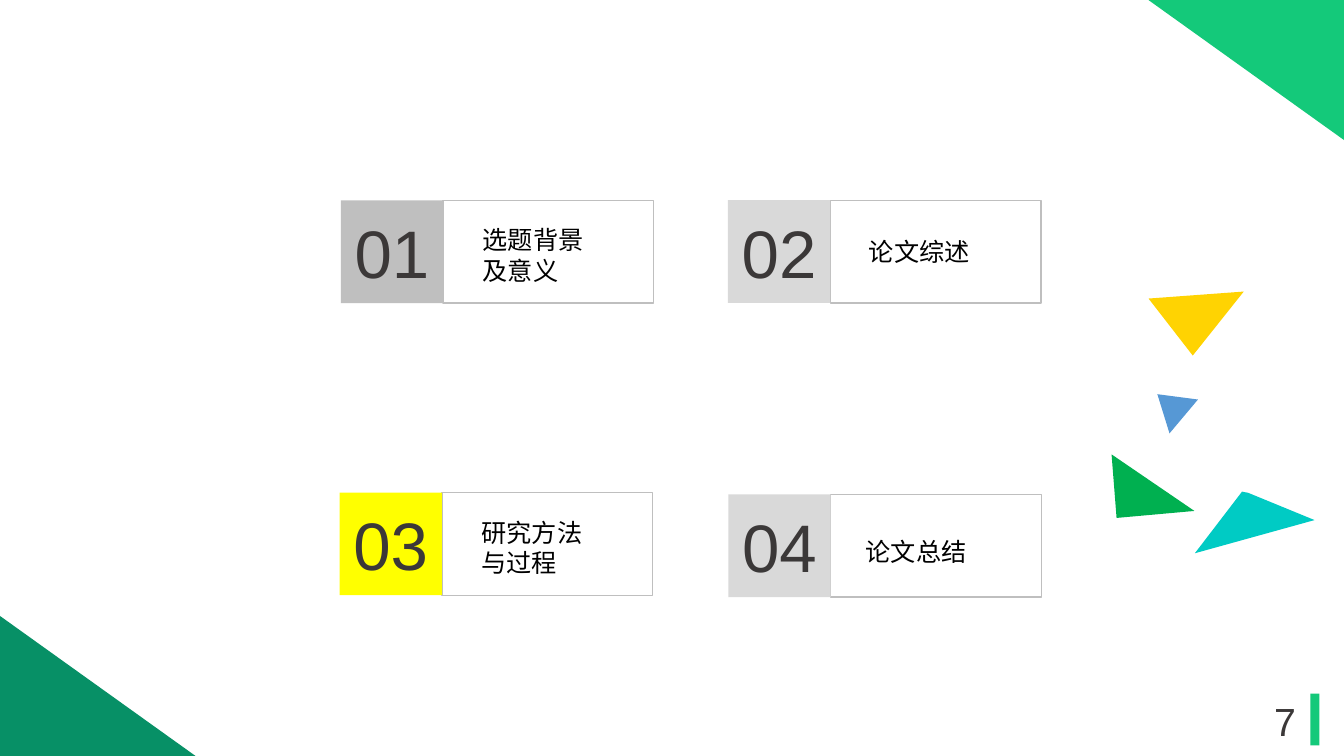
from dataclasses import dataclass

from pptx import Presentation
from pptx.dml.color import RGBColor
from pptx.enum.shapes import MSO_SHAPE as Shape
from pptx.enum.text import MSO_ANCHOR as Anchor, MSO_AUTO_SIZE as AutoSize, PP_ALIGN as Align
from pptx.util import Pt

# Number, heading lines, badge colour, card left and top, text offset in the card
CARDS = [
    ("01", ["选题背景", "及意义"], "BFBFBF", (243.4, 143.2), (94.3, 13.8)),
    ("02", ["论文综述"], "D9D9D9", (520, 143), (93.5, 22)),
    ("03", ["研究方法", "与过程"], "FFFF00", (242.6, 351.8), (94.3, 14)),
    ("04", ["论文总结"], "D9D9D9", (520.3, 353.2), (91, 26.3)),
]
PAGE_NUMBER = "7"
TRIANGLES = [
    ("FFD302", [(820.4, 213.3), (888.4, 208.3), (852, 254)]),
    ("5698D5", [(826.7, 281.6), (855.7, 285.4), (835.4, 309.6)]),
    ("00B050", [(794, 324.6), (797.6, 370), (853.2, 365)]),
    ("00CBC4", [(853.5, 395.2), (887.2, 351.2), (891.5, 352), (939, 371.5)]),
]


@dataclass(frozen=True)
class Theme:
    font: str = "Arial"
    ink: str = "3B3838"
    heading: str = "000000"
    border: str = "BFBFBF"
    green: str = "14C97A"
    dark_green: str = "079066"
    number_size: float = 48
    heading_size: float = 18
    page_size: float = 28


THEME = Theme()
SLIDE_WIDTH, SLIDE_HEIGHT = 960, 540
BADGE_WIDTH, PANEL_WIDTH, CARD_HEIGHT = 73, 150.6, 73.4
HEADING_WIDTH, LINE_HEIGHT, TEXT_PADDING = 108.7, 21.8, 7.2
CORNER_WIDTH, CORNER_HEIGHT = 139.7, 100


def paint(shape, fill=None, line=None):
    shape.shadow.inherit = False
    if fill:
        shape.fill.solid()
        shape.fill.fore_color.rgb = RGBColor.from_string(fill)
    else:
        shape.fill.background()
    if line:
        shape.line.color.rgb = RGBColor.from_string(line)
        shape.line.width = Pt(1)
    else:
        shape.line.fill.background()


def add_block(shapes, kind, box, fill=None, line=None):
    block = shapes.add_shape(kind, *map(Pt, box))
    paint(block, fill, line)
    return block


def write(shape, lines, size, color, align=Align.LEFT, anchor=Anchor.TOP):
    frame = shape.text_frame
    frame.word_wrap = True
    frame.vertical_anchor = anchor
    frame.text = "\n".join(lines)
    for para in frame.paragraphs:
        para.alignment = align
        para.font.name = THEME.font
        para.font.size = Pt(size)
        para.font.color.rgb = RGBColor.from_string(color)


def add_card(page, number, lines, fill, origin, offset):
    left, top = origin
    group = page.shapes.add_group_shape().shapes
    add_block(group, Shape.RECTANGLE, (left + BADGE_WIDTH, top, PANEL_WIDTH, CARD_HEIGHT),
              line=THEME.border)
    badge = add_block(group, Shape.RECTANGLE, (left, top, BADGE_WIDTH, CARD_HEIGHT), fill)
    write(badge, [number], THEME.number_size, THEME.ink, Align.CENTER, Anchor.MIDDLE)
    height = len(lines) * LINE_HEIGHT + TEXT_PADDING
    heading = group.add_textbox(Pt(left + offset[0]), Pt(top + offset[1]),
                                Pt(HEADING_WIDTH), Pt(height))
    write(heading, lines, THEME.heading_size, THEME.heading)
    heading.text_frame.auto_size = AutoSize.SHAPE_TO_FIT_TEXT


def add_page_number(page):
    bar = add_block(page.shapes, Shape.ROUNDED_RECTANGLE, (936, 495.4, 6.4, 37), THEME.green)
    bar.adjustments[0] = 0
    box = page.shapes.add_textbox(Pt(890.6), Pt(500.6), Pt(54.7), Pt(28.8))
    write(box, [PAGE_NUMBER], THEME.page_size, THEME.ink, Align.CENTER, Anchor.MIDDLE)


def add_corners(page):
    size = (CORNER_WIDTH, CORNER_HEIGHT)
    add_block(page.shapes, Shape.RIGHT_TRIANGLE,
              (0, SLIDE_HEIGHT - CORNER_HEIGHT, *size), THEME.dark_green)
    top_corner = add_block(page.shapes, Shape.RIGHT_TRIANGLE,
                           (SLIDE_WIDTH - CORNER_WIDTH, 0, *size), THEME.green)
    top_corner.rotation = 180


def add_triangle(page, fill, points):
    start, *rest = [(Pt(x), Pt(y)) for x, y in points]
    builder = page.shapes.build_freeform(*start)
    builder.add_line_segments(rest, close=True)
    paint(builder.convert_to_shape(), fill)


def main():
    deck = Presentation()
    deck.slide_width, deck.slide_height = Pt(SLIDE_WIDTH), Pt(SLIDE_HEIGHT)
    page = deck.slides.add_slide(deck.slide_layouts[6])
    for card in CARDS:
        add_card(page, *card)
    add_page_number(page)
    add_corners(page)
    for triangle in TRIANGLES:
        add_triangle(page, *triangle)
    deck.save("out.pptx")


if __name__ == "__main__":
    main()
